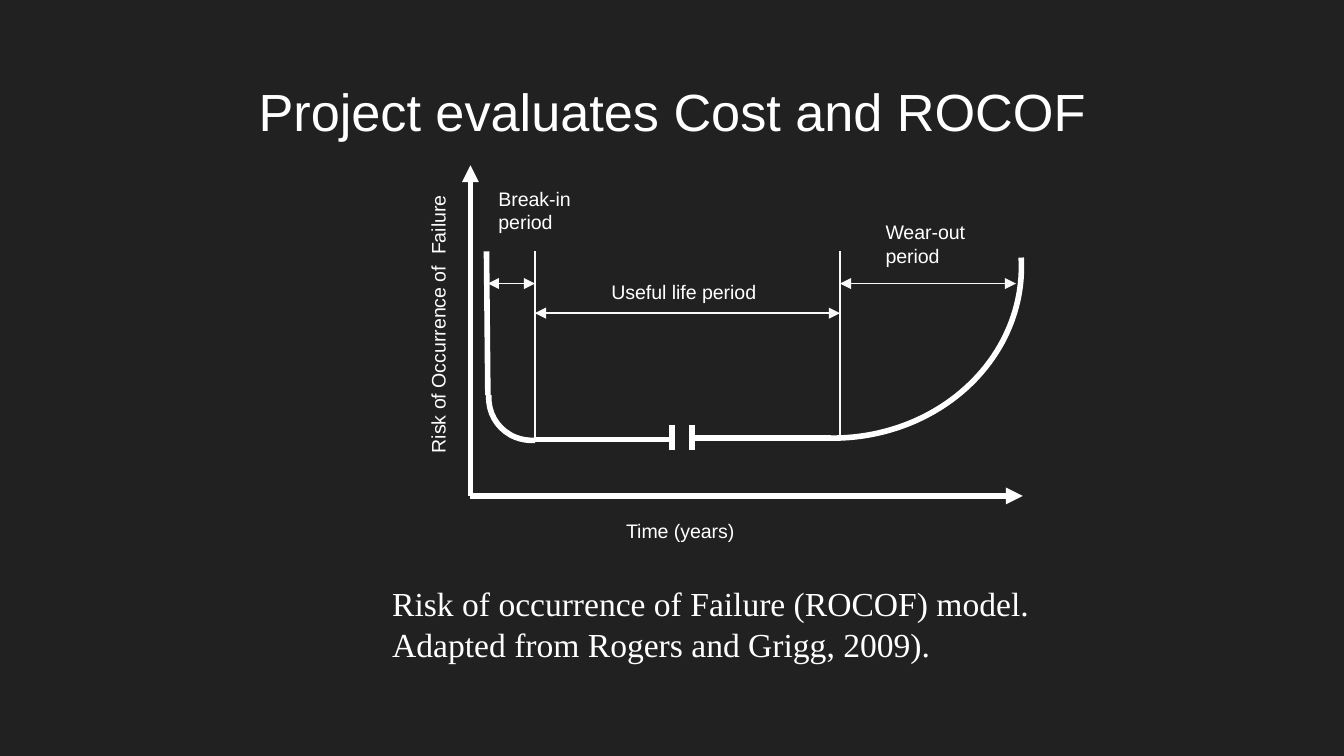
from typing import NamedTuple

from lxml.etree import SubElement
from pptx import Presentation
from pptx.dml.color import RGBColor
from pptx.enum.shapes import MSO_CONNECTOR as Connector, MSO_SHAPE as Preset
from pptx.enum.text import MSO_ANCHOR as Anchor, MSO_AUTO_SIZE as AutoSize, PP_ALIGN as Align
from pptx.oxml.ns import qn
from pptx.util import Inches, Pt

# The grid has 100 columns across the slide; its cells are square
WIDTH = Inches(10)
HEIGHT = WIDTH * 9 // 16
CELL = WIDTH / 100
COLORS = {"ground": "212121", "ink": "FFFFFF", "guide": "F9F9F9"}

# Places shared by several parts, in grid cells
ORIGIN_X, ORIGIN_Y = 35, 36.9
START, BREAK_IN_END, WEAR_OUT_START, END = 36.3, 39.8, 62.5, 75.6
CURVE_TOP, CURVE_BOTTOM = 18.7, 32.7
GAP_LEFT, GAP_RIGHT = 50, 51.5


class Box(NamedTuple):
    left: float
    top: float
    width: float
    height: float


class Line(NamedTuple):
    x1: float
    y1: float
    x2: float
    y2: float


class Arc(NamedTuple):
    box: Box
    start: float
    end: float
    rotation: float = 0
    flipped: bool = False


class Label(NamedTuple):
    box: Box
    lines: tuple[str, ...]
    rotation: float = 0
    size: float = 10.5
    font: str = "Arial"


AXES = [
    Line(ORIGIN_X, ORIGIN_Y, ORIGIN_X, 12.3),
    Line(ORIGIN_X, ORIGIN_Y, 76.1, ORIGIN_Y),
]
CURVE = [
    Line(36.2, CURVE_TOP, START, 29.4),
    Line(GAP_LEFT, CURVE_BOTTOM, BREAK_IN_END, CURVE_BOTTOM),
    *(Line(x, 31.6, x, 33.5) for x in (GAP_LEFT, GAP_RIGHT)),
    Line(61.8, 32.6, GAP_RIGHT, 32.6),
]
ARCS = [
    Arc(Box(36.3, 26.1, 7, 6.6), 76.01, 130.17, rotation=323.1),
    Arc(Box(47.9, 7.1, 28.1, 25.5), 161.16, 1.67, flipped=True),
]
GUIDES = [Line(x, CURVE_TOP, x, CURVE_BOTTOM) for x in (BREAK_IN_END, WEAR_OUT_START)]
SPANS = [
    Line(START, 21.1, BREAK_IN_END, 21.1),
    Line(BREAK_IN_END, 23.3, WEAR_OUT_START, 23.3),
    Line(WEAR_OUT_START, 21.1, END, 21.1),
]
LABELS = [
    Label(Box(21.5, 22.2, 22.2, 2.8), ("Risk of Occurrence of  Failure",), rotation=270),
    Label(Box(45.6, 38.1, 11.7, 2.8), ("Time (years)",)),
    Label(Box(36.1, 13.4, 9.1, 4.5), ("Break-in period",)),
    Label(Box(44.5, 20.3, 19.1, 2.8), ("Useful life period",)),
    Label(Box(64.9, 15.9, 9.8, 4.5), ("Wear-out", "period")),
    Label(
        Box(28.2, 42.9, 50, 7.1),
        ("Risk of occurrence of Failure (ROCOF) model. Adapted from Rogers and Grigg, 2009).",),
        size=18,
        font="Times New Roman",
    ),
]


def cells(*counts: float) -> list[int]:
    return [round(count * CELL) for count in counts]


def color(name: str) -> RGBColor:
    return RGBColor.from_string(COLORS[name])


def write(para, text: str, *, size: float, font: str = "Arial", align=Align.LEFT) -> None:
    para.alignment = align
    span = para.add_run()
    span.text = text
    span.font.size = Pt(size)
    span.font.name = font
    span.font.color.rgb = color("ink")


def draw_line(page, line: Line, *, width: float = 3, ink: str = "ink", arrows: tuple[str, ...] = ()) -> None:
    connector = page.shapes.add_connector(Connector.STRAIGHT, *cells(*line))
    connector.line.color.rgb = color(ink)
    connector.line.width = Pt(width)
    properties = connector._element.spPr
    for end in arrows:
        SubElement(properties.find(qn("a:ln")), qn(f"a:{end}"), type="triangle")
    SubElement(properties, qn("a:effectLst"))


def draw_arc(page, arc: Arc) -> None:
    shape = page.shapes.add_shape(Preset.ARC, *cells(*arc.box))
    shape.adjustments[0], shape.adjustments[1] = arc.start, arc.end
    shape.rotation = arc.rotation
    shape.shadow.inherit = False
    shape.fill.background()
    shape.line.color.rgb = color("ink")
    shape.line.width = Pt(3)
    if arc.flipped:
        shape._element.spPr.find(qn("a:xfrm")).set("flipV", "1")


def draw_label(page, label: Label) -> None:
    box = page.shapes.add_textbox(*cells(*label.box))
    box.rotation = label.rotation
    frame = box.text_frame
    frame.word_wrap = True
    frame.auto_size = AutoSize.SHAPE_TO_FIT_TEXT
    for index, text in enumerate(label.lines):
        para = frame.add_paragraph() if index else frame.paragraphs[0]
        write(para, text, size=label.size, font=label.font)


def draw_title(page, text: str) -> None:
    title = page.shapes.title
    title.left, title.top, title.width, title.height = cells(3.4, 4.9, 93.2, 6.3)
    frame = title.text_frame
    frame.vertical_anchor = Anchor.TOP
    frame.margin_left = frame.margin_right = frame.margin_top = frame.margin_bottom = Inches(0.1)
    write(frame.paragraphs[0], text, size=28, align=Align.CENTER)


def main() -> None:
    deck = Presentation()
    deck.slide_width, deck.slide_height = WIDTH, HEIGHT
    page = deck.slides.add_slide(deck.slide_layouts[5])
    page.background.fill.solid()
    page.background.fill.fore_color.rgb = color("ground")
    draw_title(page, "Project evaluates Cost and ROCOF")

    # Axes and failure curve
    for line in AXES:
        draw_line(page, line, arrows=("tailEnd",))
    for line in CURVE:
        draw_line(page, line)
    for arc in ARCS:
        draw_arc(page, arc)

    # Period limits and spans
    for line in GUIDES:
        draw_line(page, line, width=0.75, ink="guide")
    for line in SPANS:
        draw_line(page, line, width=0.75, ink="guide", arrows=("headEnd", "tailEnd"))

    # Axis names, period names and caption
    for label in LABELS:
        draw_label(page, label)
    deck.save("out.pptx")


if __name__ == "__main__":
    main()
